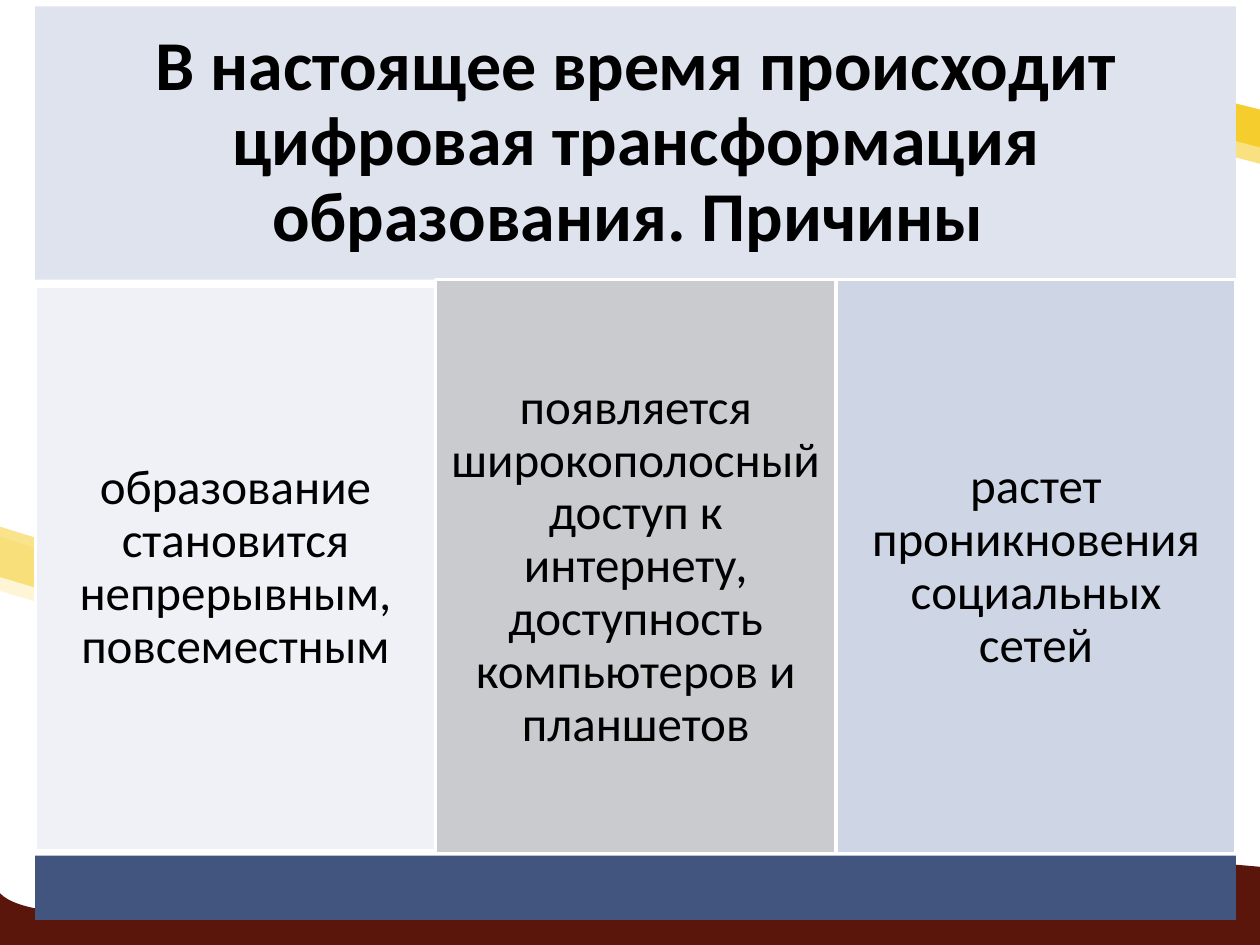
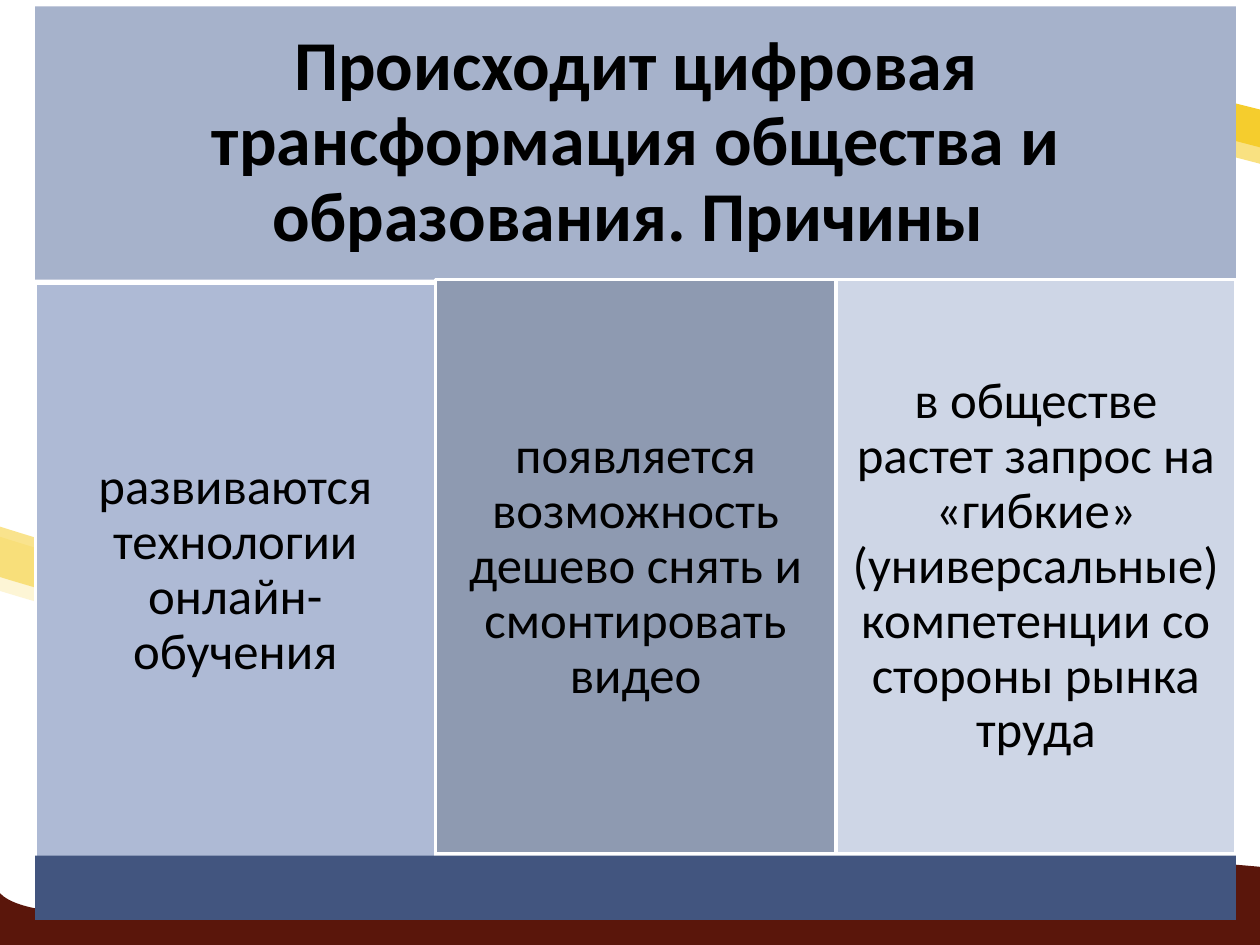
import pptx
import pptx.dml.color
import pptx.enum.shapes
import pptx.enum.text
import pptx.util
from lxml import etree
from pptx.oxml.ns import qn
from pptx.util import Inches

LEFT, WIDTH = 0.28, 9.53
COLUMN_WIDTH = WIDTH / 3
HEADER_TOP, HEADER_HEIGHT = 0.05, 2.17
FOOTER_TOP, FOOTER_HEIGHT = 6.79, 0.51

# Each outline: fill, opacity in percent, start, then steps of one point (line)
# or three points (Bézier curve).
BACKDROP = [
    ("5A160B", 100, (0, 7.09),
     [[(0.56, 7.67), (5.96, 6.5), (10, 6.88)], [(10, 7.09), (10.01, 7.32), (10.01, 7.54)],
      [(0, 7.51)], [(0, 7.09)]]),
    ("FDF5D5", 100, (0, 4.26),
     [[(7.63, 6.68), (9.67, 3.33), (9.67, 3.33)], [(9.67, 3.33), (7.82, 7.08), (0, 4.69)],
      [(0, 4.69), (0, 4.63), (0, 4.26)]]),
    ("F9E181", 100, (10, 1.3),
     [[(3.09, -0.53), (1.25, 2), (1.25, 2)], [(1.25, 2), (2.92, -0.83), (10, 0.97)],
      [(10, 0.97), (10, 1.02), (10, 1.3)]]),
    ("F5CD2D", 100, (10, 1.17),
     [[(3.49, -0.55), (1.75, 1.83), (1.75, 1.83)], [(1.75, 1.83), (3.33, -0.83), (10, 0.87)],
      [(10, 0.87), (10, 0.91), (10, 1.17)]]),
    ("F5CD2D", 54, (0, 4.18),
     [[(7.2, 6.46), (9.11, 3.3), (9.11, 3.3)], [(9.11, 3.3), (7.37, 6.83), (0, 4.58)],
      [(0, 4.58), (0, 4.53), (0, 4.18)]]),
]

# Each column: top, height, fill, text.
SLIDES = [
    {"title": "В настоящее время происходит цифровая трансформация образования. Причины ",
     "title_fill": "DFE3EE", "size": 28,
     "columns": [
         (2.27, 4.48, "EFF1F7", "образование становится непрерывным, повсеместным"),
         (2.22, 4.56, "C9CBCE", "появляется широкополосный доступ к интернету, "
                                "доступность компьютеров и планшетов"),
         (2.22, 4.56, "CED6E6", "растет проникновения социальных сетей")]},
    {"title": "Происходит цифровая трансформация общества и образования. Причины ",
     "title_fill": "A6B2CB", "size": 29,
     "columns": [
         (2.25, 4.56, "AEBAD5", "развиваются технологии онлайн-обучения"),
         (2.22, 4.56, "8E9AB1", "появляется возможность дешево снять и смонтировать видео"),
         (2.22, 4.56, "CED6E6", "в обществе растет запрос на «гибкие» (универсальные) "
                                "компетенции со стороны рынка труда")]},
]


def color(value):
    return pptx.dml.color.RGBColor.from_string(value)


def add_panel(page, left, top, width, height, fill, text="", size=28,
              margin=0.12, bold=False, outlined=False):
    """Add a filled rectangle with optional centred text and white outline."""
    panel = page.shapes.add_shape(
        pptx.enum.shapes.MSO_SHAPE.RECTANGLE,
        Inches(left), Inches(top), Inches(width), Inches(height))
    panel.shadow.inherit = False
    panel.fill.solid()
    panel.fill.fore_color.rgb = color(fill)
    if outlined:
        panel.line.color.rgb = color("FFFFFF")
        panel.line.width = pptx.util.Pt(2)
    else:
        panel.line.fill.background()
    if not text:
        return
    frame = panel.text_frame
    frame.word_wrap = True
    frame.vertical_anchor = pptx.enum.text.MSO_ANCHOR.MIDDLE
    frame.margin_left = frame.margin_right = Inches(margin)
    frame.margin_top = frame.margin_bottom = Inches(margin)
    para = frame.paragraphs[0]
    para.text = text
    para.alignment = pptx.enum.text.PP_ALIGN.CENTER
    para.line_spacing = 0.9
    para.font.name = "Calibri"
    para.font.size = pptx.util.Pt(size)
    para.font.bold = bold
    para.font.color.rgb = color("000000")


deck = pptx.Presentation()
deck.slide_width, deck.slide_height = Inches(10), Inches(7.5)

for content in SLIDES:
    page = deck.slides.add_slide(deck.slide_layouts[6])

    for fill, opacity, start, steps in BACKDROP:
        builder = page.shapes.build_freeform(Inches(start[0]), Inches(start[1]))
        builder.add_line_segments(
            [(Inches(x), Inches(y)) for step in steps for x, y in step], close=True)
        band = builder.convert_to_shape()

        # Merge every three-point step into one Bézier curve.
        lines = iter(list(band.element.iter(qn("a:lnTo"))))
        for step in steps:
            segments = [next(lines) for _ in step]
            if len(step) == 3:
                curve = etree.Element(qn("a:cubicBezTo"))
                segments[0].addprevious(curve)
                for segment in segments:
                    curve.append(segment[0])
                    segment.getparent().remove(segment)

        band.shadow.inherit = False
        band.line.fill.background()
        band.fill.solid()
        band.fill.fore_color.rgb = color(fill)
        if opacity < 100:
            tint = band.element.spPr.find(qn("a:solidFill")).find(qn("a:srgbClr"))
            etree.SubElement(tint, qn("a:alpha"), val=str(opacity * 1000))

    add_panel(page, LEFT, HEADER_TOP, WIDTH, HEADER_HEIGHT, content["title_fill"],
              content["title"], size=40, margin=0.17, bold=True)
    for index, (top, height, fill, text) in enumerate(content["columns"]):
        add_panel(page, LEFT + index * COLUMN_WIDTH, top, COLUMN_WIDTH, height, fill,
                  text, size=content["size"], outlined=True)
    add_panel(page, LEFT, FOOTER_TOP, WIDTH, FOOTER_HEIGHT, "42557F")

deck.save("out.pptx")
